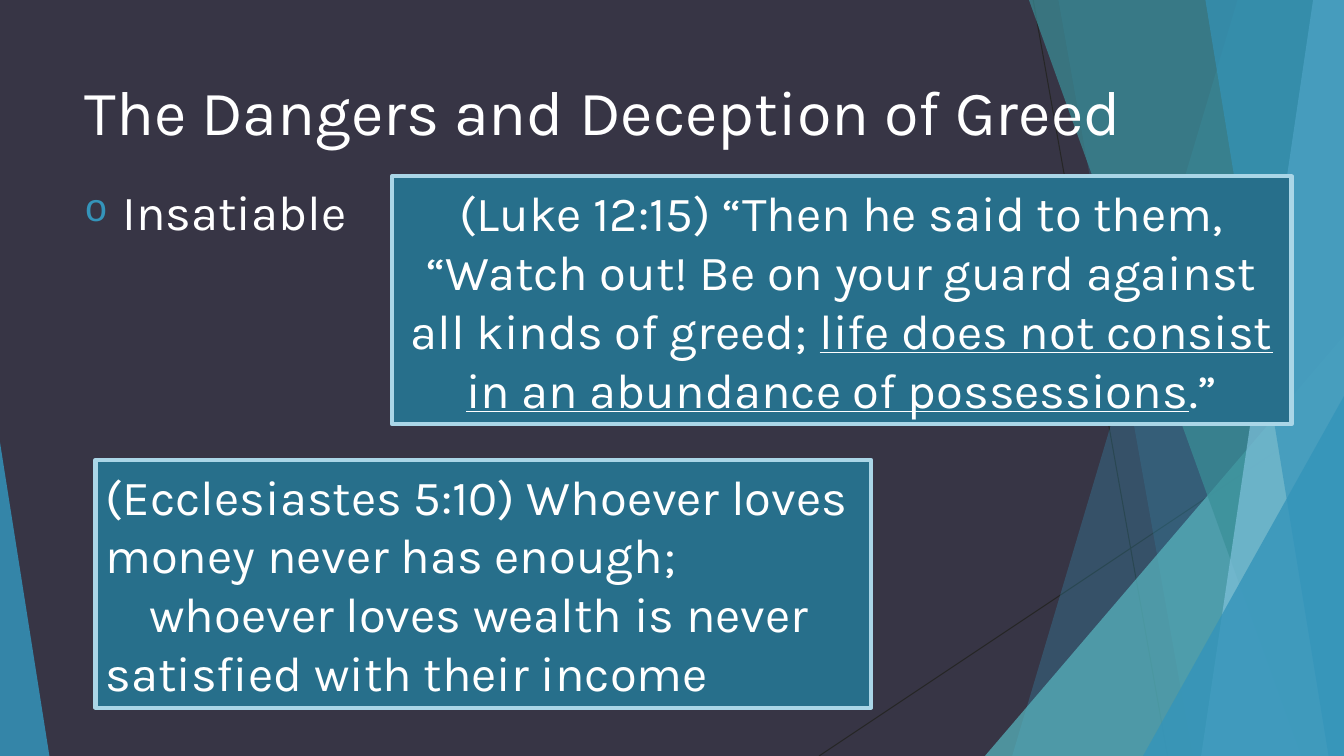
from lxml import etree
from pptx import Presentation
from pptx.dml.color import RGBColor
from pptx.enum import shapes, text
from pptx.oxml import ns
from pptx.util import Pt

WIDTH, HEIGHT = 960, 540


def color(hex_value):
    return RGBColor.from_string(hex_value)


def add_run(paragraph, words, size=35, underline=None):
    run = paragraph.add_run()
    run.text = words
    run.font.name = "Karla"
    run.font.size = Pt(size)
    run.font.color.rgb = color("FFFFFF")
    run.font.underline = underline


prs = Presentation()
prs.slide_width, prs.slide_height = Pt(WIDTH), Pt(HEIGHT)
slide = prs.slides.add_slide(prs.slide_layouts[6])
slide.background.fill.solid()
slide.background.fill.fore_color.rgb = color("373545")
canvas = slide.shapes

# Thin lines behind the facets
for x1, y1, x2, y2 in [(738, 0, 834, HEIGHT), (WIDTH, 290, 585, HEIGHT)]:
    ray = canvas.add_connector(
        shapes.MSO_CONNECTOR.STRAIGHT, Pt(x1), Pt(y1), Pt(x2), Pt(y2))
    ray.line.color.rgb = color("262626")
    ray.line.width = Pt(0.75)
    etree.SubElement(ray._element.spPr, ns.qn("a:effectLst"))

# Facets: bands (top x, bottom x) reach the right edge,
# triangles (left, top, width, apex) stand on the bottom edge
facets = [
    ((884, 723), "3494BA", 30),
    ((756, 852), "3494BA", 20),
    ((703.5, 240, 256.5, 1), "58B6C0", 72),
    ((735, 929.5), "3A8F98", 70),
    ((938, 858), "7FC1DB", 70),
    ((861, 949), "3494BA", 65),
    ((816.5, 283, 143.5, 1), "3494BA", 80),
    ((0, 316, 35.3, 0), "3494BA", 85),
]
for outline, fill, opacity in facets:
    if len(outline) == 2:
        top_x, bottom_x = outline
        builder = canvas.build_freeform(Pt(top_x), 0)
        builder.add_line_segments(
            [(Pt(WIDTH), 0), (Pt(WIDTH), Pt(HEIGHT)), (Pt(bottom_x), Pt(HEIGHT))])
        facet = builder.convert_to_shape()
    else:
        left, top, width, apex = outline
        facet = canvas.add_shape(
            shapes.MSO_SHAPE.ISOSCELES_TRIANGLE,
            Pt(left), Pt(top), Pt(width), Pt(HEIGHT - top))
        facet.adjustments[0] = apex
    facet.shadow.inherit = False
    facet.line.fill.background()
    facet.fill.solid()
    facet.fill.fore_color.rgb = color(fill)
    tint = facet._element.spPr.find(ns.qn("a:solidFill"))[0]
    etree.SubElement(tint, ns.qn("a:alpha"), val=str(opacity * 1000))

# Title
title = canvas.add_textbox(Pt(53.3), Pt(48.2), Pt(793), Pt(75.6)).text_frame
title.word_wrap = True
add_run(title.paragraphs[0], "The Dangers and Deception of Greed", 45)

# Bulleted point
point = canvas.add_textbox(Pt(53.3), Pt(126), Pt(853), Pt(346)).text_frame
point.word_wrap = True
insatiable = point.paragraphs[0]
add_run(insatiable, "Insatiable")
props = insatiable._p.get_or_add_pPr()
props.set("marL", str(Pt(27)))
props.set("indent", str(Pt(-27)))
bullet_color = etree.SubElement(props, ns.qn("a:buClr"))
etree.SubElement(bullet_color, ns.qn("a:srgbClr"), val="3494BA")
etree.SubElement(props, ns.qn("a:buSzPct"), val="80000")
etree.SubElement(props, ns.qn("a:buFont"), typeface="Courier New")
etree.SubElement(props, ns.qn("a:buChar"), char="o")

# Scripture boxes: each paragraph is (first-line indent, runs)
luke = [(0, [
    ("(Luke 12:15) “Then he said to them, “Watch out! Be on your guard "
     "against all kinds of greed; ", None),
    ("life does not consist in an abundance of possessions", True),
    (".”", None),
])]
ecclesiastes = [
    (0, [("(Ecclesiastes 5:10) Whoever loves money never has enough;", None)]),
    (31.5, [("whoever loves wealth is never satisfied with their income", None)]),
]
verses = [
    (280, 126, 642.5, text.PP_ALIGN.CENTER, luke),
    (68.2, 328.5, 554, text.PP_ALIGN.LEFT, ecclesiastes),
]
for left, top, width, align, paragraphs in verses:
    verse = canvas.add_shape(
        shapes.MSO_SHAPE.RECTANGLE, Pt(left), Pt(top), Pt(width), Pt(177))
    verse.shadow.inherit = False
    verse.fill.solid()
    verse.fill.fore_color.rgb = color("276F8B")
    verse.line.color.rgb = color("AAD6E7")
    verse.line.width = Pt(3)
    frame = verse.text_frame
    frame.word_wrap = True
    frame.auto_size = text.MSO_AUTO_SIZE.SHAPE_TO_FIT_TEXT
    frame.vertical_anchor = text.MSO_ANCHOR.MIDDLE
    for number, (indent, runs) in enumerate(paragraphs):
        paragraph = frame.add_paragraph() if number else frame.paragraphs[0]
        paragraph.alignment = align
        paragraph._p.get_or_add_pPr().set("indent", str(Pt(indent)))
        for words, underline in runs:
            add_run(paragraph, words, underline=underline)

prs.save("out.pptx")
